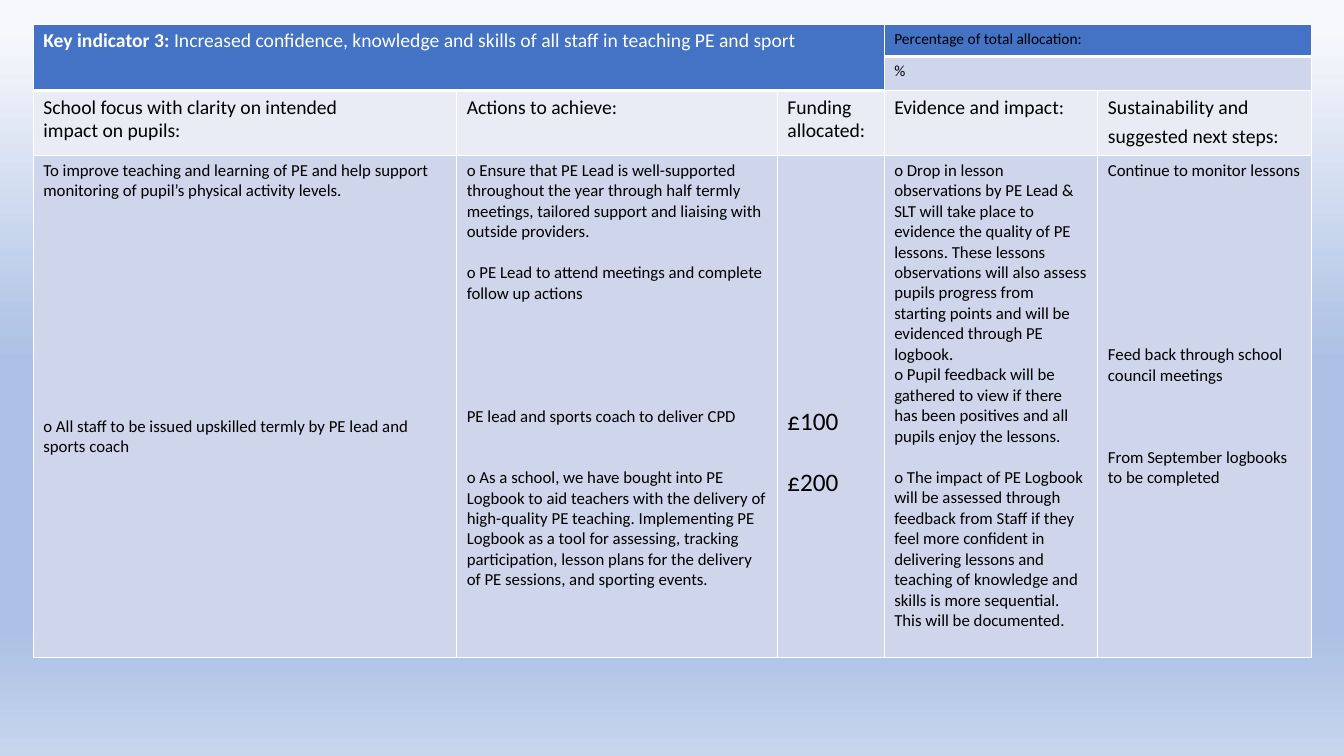
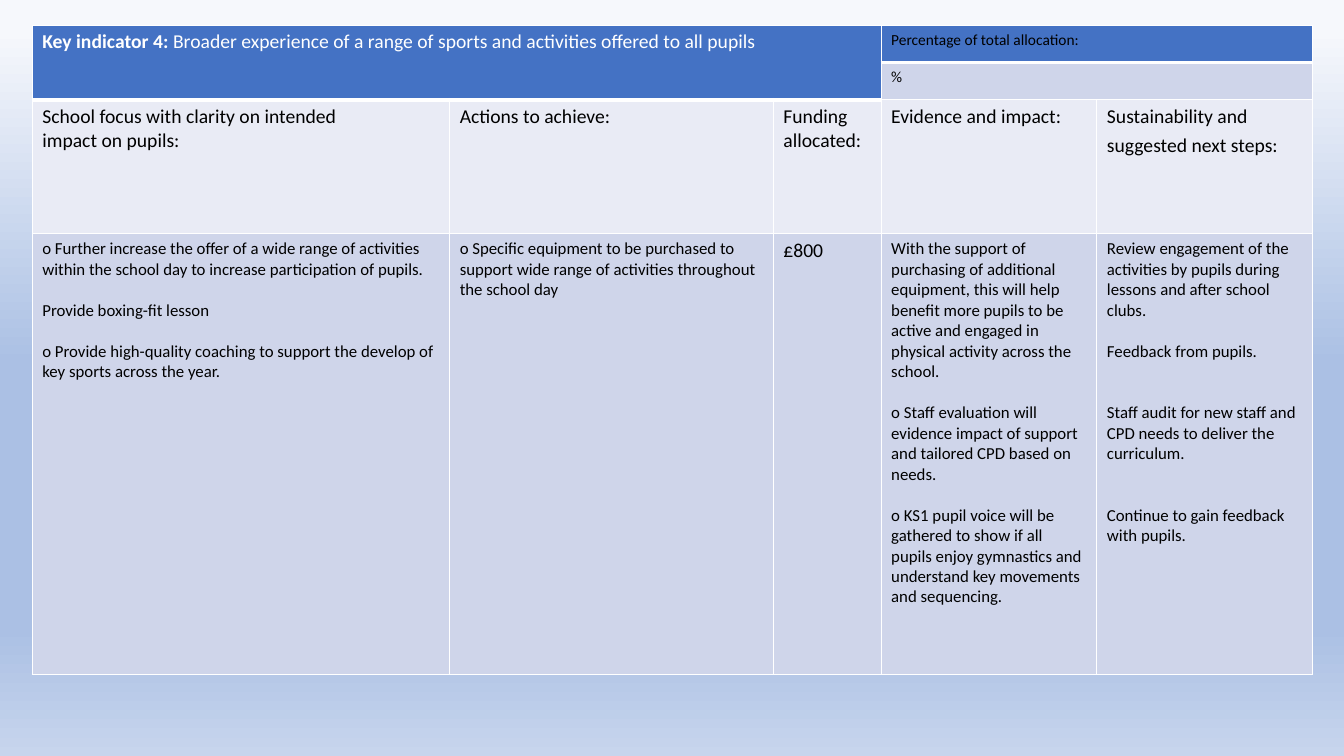
from dataclasses import dataclass
from typing import NamedTuple

from lxml.etree import SubElement
from pptx import Presentation
from pptx.dml.color import RGBColor
from pptx.oxml.ns import qn
from pptx.util import Inches, Pt

WIDE, HIGH = 13.33, 7.5
LINE = 14.65  # height in points of one line of 12 pt text
PAD = 0.05
COLS = 3, 1, 2, 2  # grid units of the columns after the first
HEX = {
    "head": "4472C4", "band": "CFD5EA", "pale": "E9EBF5",
    "white": "FFFFFF", "ink": "000000",
}
SKY = (4, "F6F8FC"), (48, "ABC0E4"), (83, "ABC0E4"), (100, "C7D5ED")


class Para(NamedTuple):
    """A paragraph; gap counts 12 pt lines of space before it."""
    text: str
    gap: float = 0
    size: int = 12
    lead: str = ""
    tone: str = "ink"
    tail: int = 0


class Cell(NamedTuple):
    row: int
    col: int
    fill: str
    paras: list[Para]
    span: tuple[int, int] = (1, 1)
    drop: float = 0


@dataclass
class Page:
    left: float
    top: float
    width: float
    unit: float
    rows: tuple[float, ...]
    lead: str
    title: str
    body: list[list[Para]]
    drop: float = 0  # lines left free above the funding figures


LABELS = [
    [Para("School focus with clarity on intended", size=14),
     Para("impact on pupils:", size=14)],
    [Para("Actions to achieve:", size=14)],
    [Para("Funding allocated:", size=14)],
    [Para("Evidence and impact:", size=14)],
    [Para("Sustainability and suggested next steps:", size=14, tail=18)],
]

PAGES = [
    Page(
        0.33, 0.24, 12.68, 1.06, (0.32, 0.32, 0.64, 4.98),
        "Key indicator 3: ",
        "Increased confidence, knowledge and skills of all staff in teaching PE and sport",
        [
            [Para("To improve teaching and learning of PE and help support monitoring "
                  "of pupil’s physical activity levels."),
             Para("o All staff to be issued upskilled termly by PE lead and sports coach",
                  10.5)],
            [Para("o Ensure that PE Lead is well-supported throughout the year through "
                  "half termly meetings, tailored support and liaising with outside "
                  "providers."),
             Para("o PE Lead to attend meetings and complete follow up actions", 1),
             Para("PE lead and sports coach to deliver CPD", 5),
             Para("o As a school, we have bought into PE Logbook to aid teachers with "
                  "the delivery of high-quality PE teaching. Implementing PE Logbook as "
                  "a tool for assessing, tracking participation, lesson plans for the "
                  "delivery of PE sessions, and sporting events.", 2)],
            [Para("£100", size=18), Para("£200", 1.5, 18)],
            [Para("o Drop in lesson observations by PE Lead & SLT will take place to "
                  "evidence the quality of PE lessons. These lessons observations will "
                  "also assess pupils progress from starting points and will be "
                  "evidenced through PE logbook."),
             Para("o Pupil feedback will be gathered to view if there has been "
                  "positives and all pupils enjoy the lessons."),
             Para("o The impact of PE Logbook will be assessed through feedback from "
                  "Staff if they feel more confident in delivering lessons and teaching "
                  "of knowledge and skills is more sequential. This will be "
                  "documented.", 1)],
            [Para("Continue to monitor lessons"),
             Para("Feed back through school council meetings", 8),
             Para("From September logbooks to be completed", 3)],
        ],
        drop=12,
    ),
    Page(
        0.32, 0.25, 12.7, 1.07, (0.37, 0.37, 1.33, 4.37),
        "Key indicator 4: ",
        "Broader experience of a range of sports and activities offered to all pupils",
        [
            [Para("o Further increase the offer of a wide range of activities within "
                  "the school day to increase participation of pupils."),
             Para("Provide boxing-fit lesson", 1),
             Para("o Provide high-quality coaching to support the develop of key "
                  "sports across the year.", 1)],
            [Para("o Specific equipment to be purchased to support wide range of "
                  "activities throughout the school day")],
            [Para("£800", size=14)],
            [Para("With the support of purchasing of additional equipment, this will "
                  "help benefit more pupils to be active and engaged in physical "
                  "activity across the school."),
             Para("o Staff evaluation will evidence impact of support and tailored CPD "
                  "based on needs.", 1),
             Para("o KS1 pupil voice will be gathered to show if all pupils enjoy "
                  "gymnastics and understand key movements and sequencing.", 1)],
            [Para("Review engagement of the activities by pupils during lessons and "
                  "after school clubs."),
             Para("Feedback from pupils.", 1),
             Para("Staff audit for new staff and CPD needs to deliver the "
                  "curriculum.", 2),
             Para("Continue to gain feedback with pupils.", 2)],
        ],
    ),
]


def paint(master) -> None:
    """Give the master its vertical four-stop gradient."""
    fill = master.background.fill
    fill.gradient()
    fill.gradient_angle = 270
    stops = master.element.find(".//" + qn("a:gsLst"))
    for stop in list(stops):
        stops.remove(stop)
    for place, tone in SKY:
        stop = SubElement(stops, qn("a:gs"), pos=str(place * 1000))
        SubElement(stop, qn("a:srgbClr"), val=tone)


def edge(cell, first: bool) -> None:
    """Draw white borders, with a heavy rule under the first row."""
    sides = {"L": 1, "R": 1, "T": 1, "B": 3} if first else {"L": 1, "R": 1, "B": 1}
    props = cell._tc.get_or_add_tcPr()
    for side, width in sides.items():
        line = SubElement(props, qn("a:ln" + side), w=str(Pt(width)))
        solid = SubElement(line, qn("a:solidFill"))
        SubElement(solid, qn("a:srgbClr"), val=HEX["white"])


def add_run(para, text: str, size: int, tone: str, bold: bool = False) -> None:
    run = para.add_run()
    run.text = text
    style = {"name": "Calibri", "size": Pt(size), "bold": bold}
    for name, value in style.items():
        setattr(run.font, name, value)
    run.font.color.rgb = RGBColor.from_string(HEX[tone])


def write(frame, paras: list[Para]) -> None:
    for i, item in enumerate(paras):
        para = frame.add_paragraph() if i else frame.paragraphs[0]
        if item.gap:
            para.space_before = Pt(item.gap * LINE)
        if item.lead:
            add_run(para, item.lead, item.size, item.tone, True)
        add_run(para, item.text, item.size, item.tone)
        if item.tail:
            add_run(para, " ", item.tail, item.tone)


def plan(page: Page) -> list[Cell]:
    """List the cells of a page: title, allocation, labels, body."""
    title = Para(page.title, size=14, lead=page.lead, tone="white")
    cells = [
        Cell(0, 0, "head", [title], (2, 3)),
        Cell(0, 3, "head", [Para("Percentage of total allocation:", size=11)], (1, 2)),
        Cell(1, 3, "band", [Para("%", size=11)], (1, 2)),
    ]
    cells += [Cell(2, col, "pale", text) for col, text in enumerate(LABELS)]
    cells += [Cell(3, col, "band", text, drop=page.drop if col == 2 else 0)
              for col, text in enumerate(page.body)]
    return cells


def draw(slide, page: Page) -> None:
    first = page.width - sum(COLS) * page.unit
    widths = [first] + [share * page.unit for share in COLS]
    box = page.left, page.top, page.width, sum(page.rows)
    table = slide.shapes.add_table(len(page.rows), len(widths), *map(Inches, box)).table
    for col, width in zip(table.columns, widths):
        col.width = Inches(width)
    for row, height in zip(table.rows, page.rows):
        row.height = Inches(height)
    for item in plan(page):
        cell = table.cell(item.row, item.col)
        down, over = item.span
        if item.span != (1, 1):
            cell.merge(table.cell(item.row + down - 1, item.col + over - 1))
        edge(cell, item.row == 0)
        cell.fill.solid()
        cell.fill.fore_color.rgb = RGBColor.from_string(HEX[item.fill])
        cell.margin_top = Inches(PAD) + Pt(item.drop * LINE)
        write(cell.text_frame, item.paras)


def main() -> None:
    deck = Presentation()
    deck.slide_width, deck.slide_height = Inches(WIDE), Inches(HIGH)
    paint(deck.slide_master)
    for page in PAGES:
        draw(deck.slides.add_slide(deck.slide_layouts[6]), page)
    deck.save("out.pptx")


if __name__ == "__main__":
    main()
